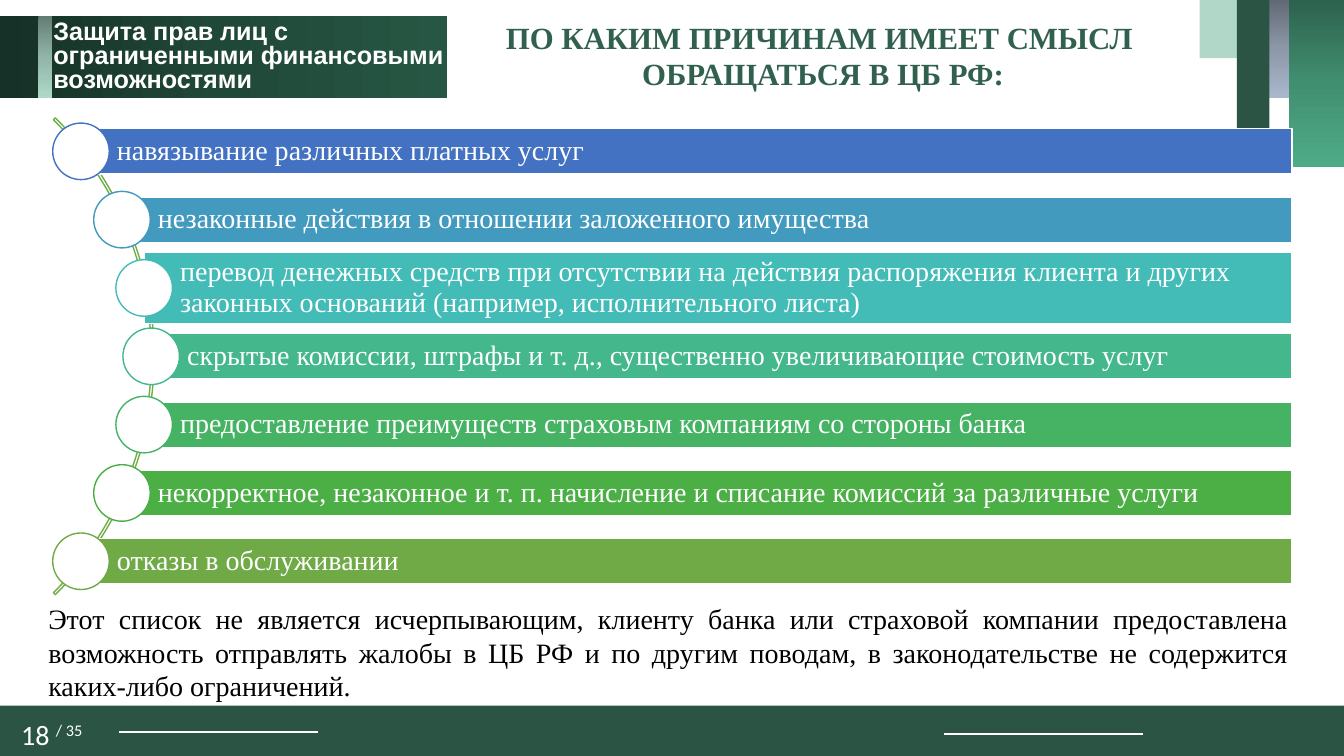
from copy import deepcopy
from dataclasses import dataclass
from math import sqrt

from lxml.etree import SubElement
from pptx import Presentation
from pptx.dml.color import RGBColor
from pptx.enum.shapes import MSO_CONNECTOR, MSO_SHAPE
from pptx.enum.text import MSO_ANCHOR, MSO_AUTO_SIZE, PP_ALIGN
from pptx.oxml.ns import qn
from pptx.util import Pt

# Content
TITLE = "ПО КАКИМ ПРИЧИНАМ ИМЕЕТ СМЫСЛ \vОБРАЩАТЬСЯ В ЦБ РФ:"
TOPIC = ["Защита прав лиц с \vограниченными финансовыми", "возможностями"]
REASONS = [  # text, colour, bar height
    ("навязывание различных платных услуг", "4372C3", 32.4),
    ("незаконные действия в отношении заложенного имущества", "439ABF", 32.4),
    ("перевод денежных средств при отсутствии на действия распоряжения клиента и других "
     "законных оснований (например, исполнительного листа)", "43BCB8", 51),
    ("скрытые комиссии, штрафы и т. д., существенно увеличивающие стоимость услуг", "44B78C", 32.4),
    ("предоставление преимуществ страховым компаниям со стороны банка", "45B363", 32.4),
    ("некорректное, незаконное и т. п. начисление и списание комиссий за различные услуги",
     "4CAF46", 32.4),
    ("отказы в обслуживании", "6FAA47", 32.4),
]
CONCLUSION = ("Этот список не является исчерпывающим, клиенту банка или страховой компании "
              "предоставлена возможность отправлять жалобы в ЦБ РФ и по другим поводам, "
              "в законодательстве не содержится каких-либо ограничений.")
PAGE, PAGE_TOTAL = "18 ", "/ 35"


@dataclass(frozen=True)
class Theme:
    white: str = "FFFFFF"
    black: str = "000000"
    dark_green: str = "2B5444"
    title_green: str = "31614E"
    pale_green: str = "B1D7C9"
    arc_green: str = "70AD47"
    slate: tuple = ("616975", "8D98A9", "A9B7CC")
    emerald: tuple = ("2D624E", "418F71", "4EAB88")
    banner: tuple = ("163127", "204838", "275744")
    stripe: tuple = ("647D74", "91B5A8", "AED9C9")
    serif: str = "Times New Roman"
    sans: str = "Arial"
    number_font: str = "Calibri"
    title_size: int = 22
    body_size: int = 20
    topic_size: int = 18


THEME = Theme()
SLIDE_WIDTH, SLIDE_HEIGHT = 960, 540

# Corner blocks, banner and footer: left, top, width, height, fill, gradient angle
DOWN, RIGHT = 270, 0
BLOCKS = [
    (0, 504, SLIDE_WIDTH, 36, THEME.dark_green, None),
    (906.5, 0, 14.4, 69.8, THEME.slate, DOWN),
    (920.9, 0, 39.1, 119, THEME.emerald, DOWN),
    (856.8, 0, 27, 41.5, THEME.pale_green, None),
    (883.5, 0, 23.2, 91.3, THEME.dark_green, None),
    (0, 11.5, 319.2, 58.5, THEME.banner, RIGHT),
    (27.5, 11.5, 9.8, 58.5, THEME.stripe, DOWN),
]
FOOTER_LINES = [(85, 522.7), (674.6, 524.2)]  # left, top
FOOTER_LINE_LENGTH = 142

# Circles sit on an arc around a centre left of the slide
ARC_X, ARC_Y, ARC_RADIUS = -130.7, 254.5, 240.8
CIRCLE_TRACK, CIRCLE_SIZE = 238.7, 40.4
ROW_PITCH, BAR_RIGHT = 48.8, 922.8


def add_text(shape, text, *, font=THEME.serif, size=THEME.body_size, color=THEME.white,
             bold=False, align=PP_ALIGN.LEFT, anchor=MSO_ANCHOR.TOP, spacing=1.0,
             insets=(7.2, 3.6, 7.2, 3.6), superscript=""):
    frame = shape.text_frame
    frame.auto_size = MSO_AUTO_SIZE.NONE
    frame.word_wrap = True
    frame.vertical_anchor = anchor
    frame.margin_left, frame.margin_top, frame.margin_right, frame.margin_bottom = map(Pt, insets)
    for index, line in enumerate([text] if isinstance(text, str) else text):
        paragraph = frame.add_paragraph() if index else frame.paragraphs[0]
        paragraph.text = line
        paragraph.alignment = align
        paragraph.line_spacing = spacing
        if superscript:
            raised = paragraph.add_run()
            raised.text = superscript
            raised._r.get_or_add_rPr().set("baseline", "30000")
        for run in paragraph.runs:
            run.font.name, run.font.size, run.font.bold = font, Pt(size), bold
            run.font.color.rgb = RGBColor.from_string(color)
        # Line breaks take the size of the text around them
        for line_break in paragraph._p.findall(qn("a:br")):
            line_break.insert(0, deepcopy(paragraph.runs[0]._r.rPr))


def add_box(slide, left, top, width, height):
    return slide.shapes.add_textbox(Pt(left), Pt(top), Pt(width), Pt(height))


def add_block(slide, kind, left, top, width, height, fill=None, angle=None, line=None):
    shape = slide.shapes.add_shape(kind, Pt(left), Pt(top), Pt(width), Pt(height))
    shape.shadow.inherit = False
    if fill is None:
        shape.fill.background()
    elif isinstance(fill, str):
        shape.fill.solid()
        shape.fill.fore_color.rgb = RGBColor.from_string(fill)
    else:
        shape.fill.gradient()
        shape.fill.gradient_angle = angle
        stops = shape._element.spPr.find(".//" + qn("a:gsLst"))
        stops.insert(1, deepcopy(stops[0]))
        for stop, color, position in zip(shape.fill.gradient_stops, fill, (0, 0.5, 1)):
            stop.color.rgb = RGBColor.from_string(color)
            stop.position = position
    if line:
        shape.line.color.rgb = RGBColor.from_string(line)
        shape.line.width = Pt(1)
    else:
        shape.line.fill.background()
    return shape


def add_footer_line(slide, left, top):
    line = slide.shapes.add_connector(MSO_CONNECTOR.STRAIGHT, Pt(left), Pt(top),
                                      Pt(left + FOOTER_LINE_LENGTH), Pt(top))
    line.line.color.rgb = RGBColor.from_string(THEME.white)
    line.line.width = Pt(1.5)
    SubElement(line._element.spPr, qn("a:effectLst"))


def add_reasons(slide):
    arc = add_block(slide, MSO_SHAPE.BLOCK_ARC, ARC_X - ARC_RADIUS, ARC_Y - ARC_RADIUS,
                    2 * ARC_RADIUS, 2 * ARC_RADIUS, line=THEME.arc_green)
    for index, value in enumerate((189, 27, 0.004)):
        arc.adjustments[index] = value
    for row, (reason, color, height) in enumerate(REASONS):
        offset = (row - (len(REASONS) - 1) / 2) * ROW_PITCH
        center_x = ARC_X + sqrt(CIRCLE_TRACK ** 2 - offset ** 2)
        center_y = ARC_Y + offset
        bar = add_block(slide, MSO_SHAPE.RECTANGLE, center_x, center_y - height / 2,
                        BAR_RIGHT - center_x, height, color, line=THEME.white)
        add_text(bar, reason, anchor=MSO_ANCHOR.MIDDLE, spacing=0.9, insets=(25.7, 4, 4, 4))
        add_block(slide, MSO_SHAPE.OVAL, center_x - CIRCLE_SIZE / 2, center_y - CIRCLE_SIZE / 2,
                  CIRCLE_SIZE, CIRCLE_SIZE, THEME.white, line=color)


def main():
    presentation = Presentation()
    presentation.slide_width, presentation.slide_height = Pt(SLIDE_WIDTH), Pt(SLIDE_HEIGHT)
    slide = presentation.slides.add_slide(presentation.slide_layouts[5])

    # Decoration and footer
    for left, top, width, height, fill, angle in BLOCKS:
        add_block(slide, MSO_SHAPE.RECTANGLE, left, top, width, height, fill, angle)
    for left, top in FOOTER_LINES:
        add_footer_line(slide, left, top)
    add_text(add_box(slide, -2.2, 513.4, 78.5, 27.4), PAGE, font=THEME.number_font,
             align=PP_ALIGN.CENTER, spacing=0.8, superscript=PAGE_TOTAL)

    # Topic and title
    add_text(add_box(slide, 31, 11.5, 296.6, 44), TOPIC, font=THEME.sans,
             size=THEME.topic_size, bold=True, spacing=0.8)
    title = slide.shapes.title
    title.left, title.top, title.width, title.height = Pt(351.4), Pt(9.4), Pt(473), Pt(60.5)
    add_text(title, TITLE, size=THEME.title_size, color=THEME.title_green, bold=True,
             align=PP_ALIGN.CENTER)

    # Reasons and conclusion
    add_reasons(slide)
    add_text(add_box(slide, 27.4, 426.2, 900, 80), CONCLUSION, color=THEME.black,
             align=PP_ALIGN.JUSTIFY)

    presentation.save("out.pptx")


if __name__ == "__main__":
    main()
